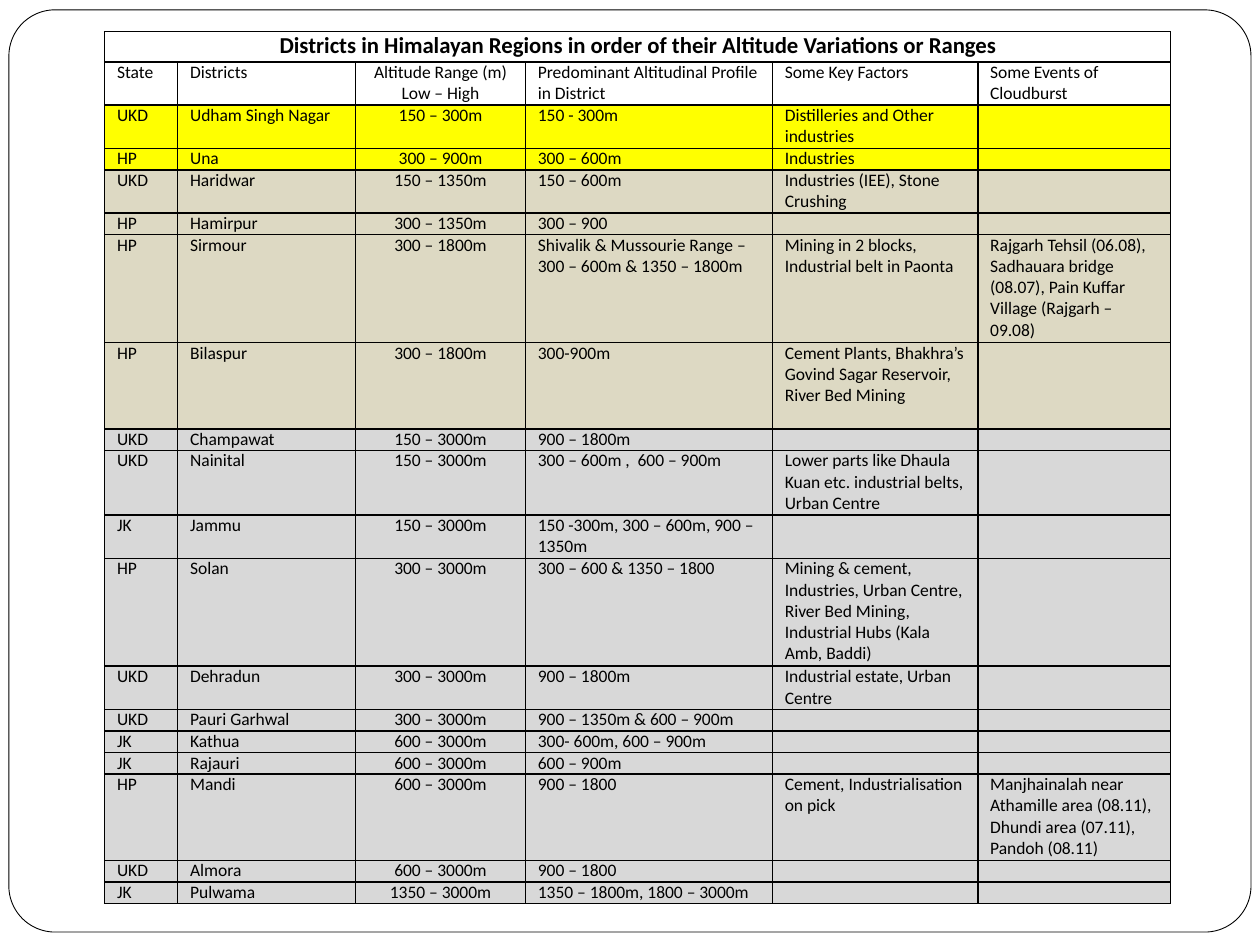
from dataclasses import dataclass

from lxml import etree
from pptx import Presentation
from pptx.dml.color import RGBColor
from pptx.enum.shapes import MSO_SHAPE
from pptx.enum.text import PP_ALIGN
from pptx.oxml.ns import qn
from pptx.util import Cm, Pt

ROUNDED = MSO_SHAPE.ROUNDED_RECTANGLE
LEFT, CENTER = PP_ALIGN.LEFT, PP_ALIGN.CENTER
BLANK_LAYOUT = 6


@dataclass(frozen=True)
class Theme:
    font: str = "Calibri"
    title_size: int = 13
    body_size: int = 10
    ink: str = "000000"
    paper: str = "FFFFFF"
    plain: str = ""
    low: str = "FFFF00"
    middle: str = "DDD9C3"
    high: str = "D8D8D8"
    frame_width: float = 0.5
    border_width: float = 1


THEME = Theme()

# Boxes in centimetres: left, top, width, height
FRAME_BOX = (0.18, 0.2, 25.04, 18.59)
TABLE_BOX = (2.11, 0.64, 21.49, 17.58)
COLUMN_SHARES = (0.58, 1.41, 1.35, 1.96, 1.63, 1.53)
TITLE_HEIGHT = 0.61
CELL_MARGIN = 0.25
RANGE_COLUMN = 2

TITLE = "Districts in Himalayan Regions in order of their Altitude Variations or Ranges"

# Each band: fill, then rows of (height in text lines, cell texts)
BANDS = (
    (THEME.plain, (
        (2, ("State", "Districts", "Altitude Range (m)\nLow – High",
             "Predominant Altitudinal Profile in District", "Some Key Factors",
             "Some Events of Cloudburst")),
    )),
    (THEME.low, (
        (2, ("UKD", "Udham Singh Nagar", "150 – 300m", "150 - 300m",
             "Distilleries and Other industries", "")),
        (1, ("HP", "Una", "300 – 900m", "300 – 600m", "Industries", "")),
    )),
    (THEME.middle, (
        (2, ("UKD", "Haridwar", "150 – 1350m", "150 – 600m",
             "Industries (IEE), Stone Crushing", "")),
        (1, ("HP", "Hamirpur", "300 – 1350m", "300 – 900", "", "")),
        (5, ("HP", "Sirmour", "300 – 1800m",
             "Shivalik & Mussourie Range – 300 – 600m & 1350 – 1800m",
             "Mining in 2 blocks, Industrial belt in Paonta",
             "Rajgarh Tehsil (06.08), Sadhauara bridge (08.07), "
             "Pain Kuffar Village (Rajgarh – 09.08)")),
        (4, ("HP", "Bilaspur", "300 – 1800m", "300-900m",
             "Cement Plants, Bhakhra’s Govind Sagar Reservoir, River Bed Mining", "")),
    )),
    (THEME.high, (
        (1, ("UKD", "Champawat", "150 – 3000m", "900 – 1800m", "", "")),
        (3, ("UKD", "Nainital", "150 – 3000m", "300 – 600m ,  600 – 900m",
             "Lower parts like Dhaula Kuan etc. industrial belts, Urban Centre", "")),
        (2, ("JK", "Jammu", "150 – 3000m", "150 -300m, 300 – 600m, 900 – 1350m", "", "")),
        (5, ("HP", "Solan", "300 – 3000m", "300 – 600 & 1350 – 1800",
             "Mining & cement, Industries, Urban Centre, River Bed Mining, "
             "Industrial Hubs (Kala Amb, Baddi)", "")),
        (2, ("UKD", "Dehradun", "300 – 3000m", "900 – 1800m",
             "Industrial estate, Urban Centre", "")),
        (1, ("UKD", "Pauri Garhwal", "300 – 3000m", "900 – 1350m & 600 – 900m", "", "")),
        (1, ("JK", "Kathua", "600 – 3000m", "300- 600m, 600 – 900m", "", "")),
        (1, ("JK", "Rajauri", "600 – 3000m", "600 – 900m", "", "")),
        (4, ("HP", "Mandi", "600 – 3000m", "900 – 1800",
             "Cement, Industrialisation on pick",
             "Manjhainalah near Athamille area (08.11), Dhundi area (07.11), "
             "Pandoh (08.11)")),
        (1, ("UKD", "Almora", "600 – 3000m", "900 – 1800", "", "")),
        (1, ("JK", "Pulwama", "1350 – 3000m", "1350 – 1800m, 1800 – 3000m", "", "")),
    )),
)


def color(value):
    return RGBColor.from_string(value)


def add_frame(slide, box):
    frame = slide.shapes.add_shape(ROUNDED, *map(Cm, box))
    frame.adjustments[0] = 0.05
    frame.shadow.inherit = False
    frame.fill.solid()
    frame.fill.fore_color.rgb = color(THEME.paper)
    frame.line.color.rgb = color(THEME.ink)
    frame.line.width = Pt(THEME.frame_width)


def set_borders(cell):
    properties = cell._tc.get_or_add_tcPr()
    for side in ("a:lnL", "a:lnR", "a:lnT", "a:lnB"):
        line = etree.SubElement(properties, qn(side), w=str(Pt(THEME.border_width)))
        fill = etree.SubElement(line, qn("a:solidFill"))
        etree.SubElement(fill, qn("a:srgbClr"), val=THEME.ink)


def style_cell(cell, fill):
    cell.margin_left = cell.margin_right = Cm(CELL_MARGIN)
    cell.margin_top = cell.margin_bottom = 0
    set_borders(cell)
    if fill:
        cell.fill.solid()
        cell.fill.fore_color.rgb = color(fill)
    else:
        cell.fill.background()


def write_cell(cell, text, size, alignment=LEFT, bold=False):
    for index, line in enumerate(text.split("\n")):
        frame = cell.text_frame
        paragraph = frame.add_paragraph() if index else frame.paragraphs[0]
        paragraph.alignment = alignment
        if not line:
            # An empty cell keeps the row low through its end mark
            etree.SubElement(paragraph._p, qn("a:endParaRPr"), sz=str(size * 100))
            continue
        run = paragraph.add_run()
        run.text = line
        run.font.name = THEME.font
        run.font.size = Pt(size)
        run.font.bold = bold
        run.font.color.rgb = color(THEME.ink)


def add_district_table(slide, box):
    rows = [(fill, lines, texts) for fill, band in BANDS for lines, texts in band]
    width, height = box[2:]
    table = slide.shapes.add_table(len(rows) + 1, len(COLUMN_SHARES), *map(Cm, box)).table
    table.first_row = table.horz_banding = False
    for column, share in zip(table.columns, COLUMN_SHARES):
        column.width = Cm(width * share / sum(COLUMN_SHARES))

    # Title row across all columns
    table.rows[0].height = Cm(TITLE_HEIGHT)
    for cell in table.rows[0].cells:
        style_cell(cell, THEME.plain)
    title = table.cell(0, 0)
    title.merge(table.cell(0, len(COLUMN_SHARES) - 1))
    write_cell(title, TITLE, THEME.title_size, CENTER, bold=True)

    # Heading and district rows, as high as their text lines
    line_height = (height - TITLE_HEIGHT) / sum(lines for _, lines, _ in rows)
    for index, (fill, lines, texts) in enumerate(rows, start=1):
        table.rows[index].height = Cm(lines * line_height)
        for column, text in enumerate(texts):
            cell = table.cell(index, column)
            style_cell(cell, fill)
            alignment = CENTER if column == RANGE_COLUMN else LEFT
            write_cell(cell, text, THEME.body_size, alignment)


def main():
    presentation = Presentation()
    presentation.slide_width, presentation.slide_height = Cm(25.4), Cm(19.05)
    slide = presentation.slides.add_slide(presentation.slide_layouts[BLANK_LAYOUT])
    add_frame(slide, FRAME_BOX)
    add_district_table(slide, TABLE_BOX)
    presentation.save("out.pptx")


if __name__ == "__main__":
    main()
